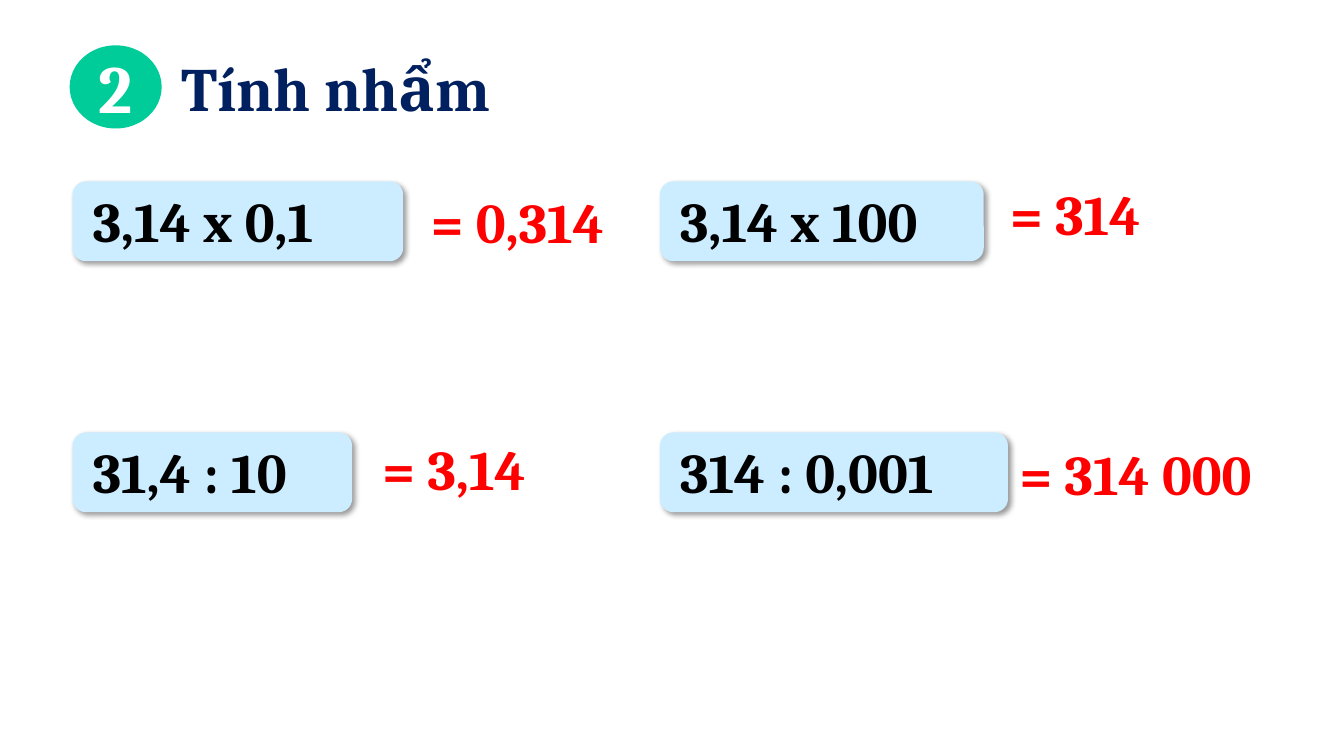
from lxml import etree
from pptx import Presentation
from pptx.dml.color import RGBColor
from pptx.enum.shapes import MSO_SHAPE
from pptx.enum.text import MSO_ANCHOR, MSO_AUTO_SIZE, PP_ALIGN
from pptx.oxml.ns import qn
from pptx.util import Inches, Pt

ELLIPSE = MSO_SHAPE.OVAL
ROUNDED = MSO_SHAPE.ROUNDED_RECTANGLE
TOP, MIDDLE = MSO_ANCHOR.TOP, MSO_ANCHOR.MIDDLE
LEFT, CENTER = PP_ALIGN.LEFT, PP_ALIGN.CENTER
GROW = MSO_AUTO_SIZE.SHAPE_TO_FIT_TEXT

GRID = 100
CARD_HEIGHT = 10.55
TEXT_HEIGHT = 10.3
TEXT_INSET = 0.77
TITLE_ONLY = 5


def color(hex_string):
    return RGBColor.from_string(hex_string)


class ExerciseSlide:
    font = "Cambria"
    badge_fill, badge_text = "00CC99", "FFFFFF"
    title_text = "002060"
    card_fill, card_text = "CCECFF", "000000"
    answer_text = "FF0000"

    def __init__(self, presentation):
        self.column = presentation.slide_width / GRID
        self.row = presentation.slide_height / GRID
        self.slide = presentation.slides.add_slide(presentation.slide_layouts[TITLE_ONLY])
        self.slide.background.fill.solid()
        self.slide.background.fill.fore_color.rgb = color("FFFFFF")

    def box(self, left, top, width, height):
        return (
            round(left * self.column),
            round(top * self.row),
            round(width * self.column),
            round(height * self.row),
        )

    def set_text(self, shape, text, size, text_color, alignment=LEFT, anchor=TOP):
        frame = shape.text_frame
        frame.text = text
        frame.word_wrap = True
        frame.vertical_anchor = anchor
        paragraph = frame.paragraphs[0]
        paragraph.alignment = alignment
        paragraph.font.name = self.font
        paragraph.font.size = Pt(size)
        paragraph.font.bold = True
        paragraph.font.color.rgb = color(text_color)

    def filled(self, shapes, kind, fill, *place):
        shape = shapes.add_shape(kind, *self.box(*place))
        shape.shadow.inherit = False
        shape.fill.solid()
        shape.fill.fore_color.rgb = color(fill)
        shape.line.fill.background()
        return shape

    def drop_shadow(self, shape):
        effects = shape._element.spPr.find(qn("a:effectLst"))
        shadow = etree.SubElement(
            effects, qn("a:outerShdw"), blurRad=str(Pt(4)), dist=str(Pt(3)),
            dir="2700000", algn="tl", rotWithShape="0",
        )
        shade = etree.SubElement(shadow, qn("a:srgbClr"), val="000000")
        etree.SubElement(shade, qn("a:alpha"), val="40000")

    def text(self, shapes, text, text_color, *place):
        shape = shapes.add_textbox(*self.box(*place))
        self.set_text(shape, text, 40, text_color)
        shape.text_frame.auto_size = GROW

    def badge(self, text, *place):
        shape = self.filled(self.slide.shapes, ELLIPSE, self.badge_fill, *place)
        self.set_text(shape, text, 48, self.badge_text, CENTER, MIDDLE)

    def title(self, text, *place):
        title = self.slide.shapes.title
        title.left, title.top, title.width, title.height = self.box(*place)
        self.set_text(title, text, 44, self.title_text)
        title.text_frame.auto_size = GROW

    def card(self, text, left, top, width):
        shapes = self.slide.shapes.add_group_shape().shapes
        card = self.filled(shapes, ROUNDED, self.card_fill, left, top, width, CARD_HEIGHT)
        self.drop_shadow(card)
        self.text(shapes, text, self.card_text,
                  left + TEXT_INSET, top, width - 2 * TEXT_INSET, TEXT_HEIGHT)

    def answer(self, text, left, top, width):
        self.text(self.slide.shapes, text, self.answer_text, left, top, width, TEXT_HEIGHT)


def main():
    presentation = Presentation()
    presentation.slide_width = Inches(13.33)
    presentation.slide_height = Inches(7.5)
    exercise = ExerciseSlide(presentation)

    exercise.badge("2", 5.18, 6, 6.85, 11)
    exercise.title("Tính nhẩm", 12.75, 6, 31.35, 11.2)

    first_column, second_column = 5.4, 49.1
    first_row, second_row = 24, 57.2
    cards = [
        ("3,14 x 0,1", first_column, first_row, 24.6),
        ("3,14 x 100", second_column, first_row, 24.1),
        ("31,4 : 10", first_column, second_row, 20.8),
        ("314 : 0,001", second_column, second_row, 25.9),
    ]
    answers = [
        ("= 0,314", 31.3, 24.15, 18.2),
        ("= 314", 74.4, 23.05, 18.2),
        ("= 3,14", 27.7, 56.8, 18.2),
        ("= 314 000", 75.1, 57.5, 21),
    ]
    for card in cards:
        exercise.card(*card)
    for answer in answers:
        exercise.answer(*answer)

    presentation.save("out.pptx")


if __name__ == "__main__":
    main()
